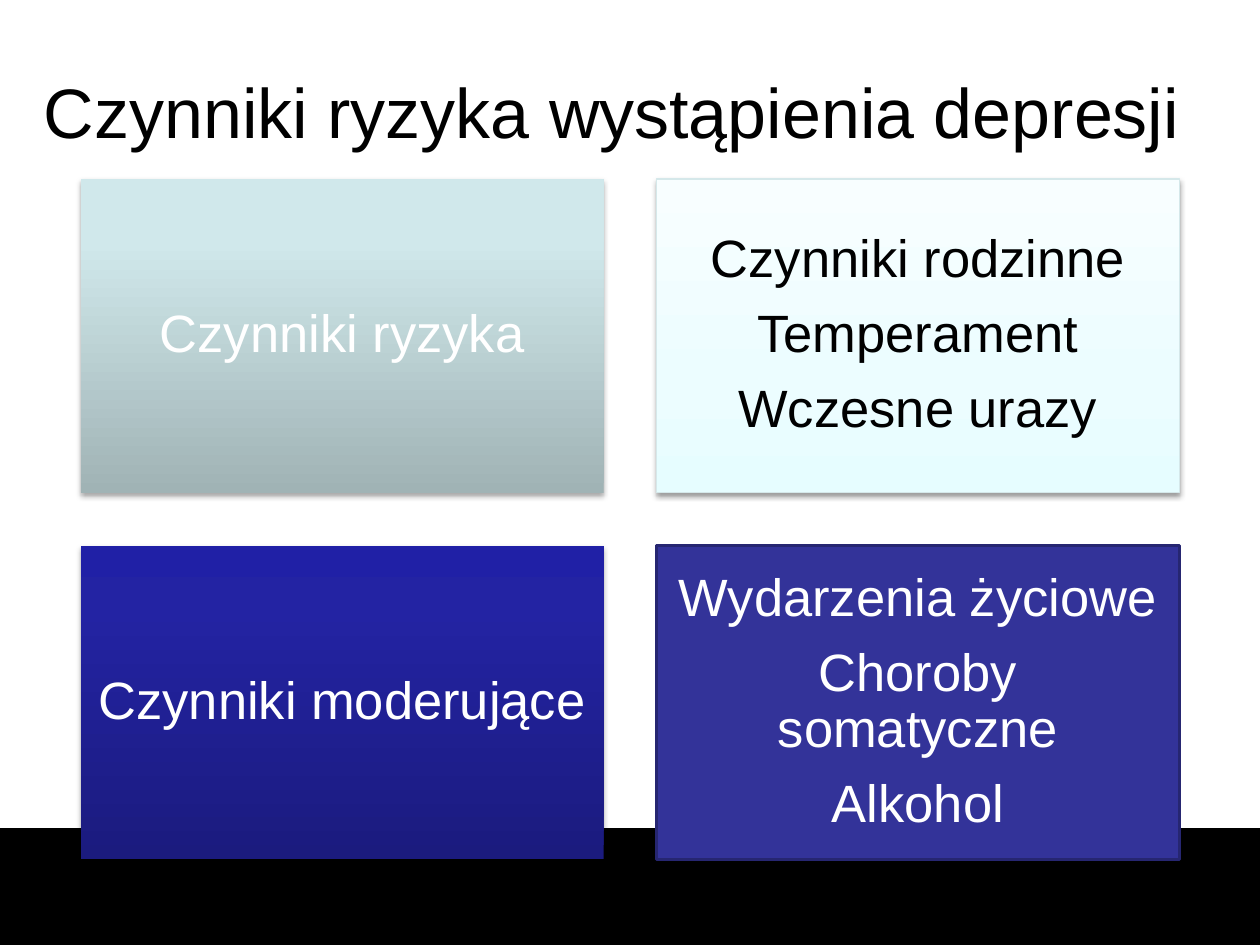
from lxml.etree import SubElement
from pptx import Presentation
from pptx.dml.color import RGBColor
from pptx.enum.shapes import MSO_SHAPE
from pptx.enum.text import MSO_ANCHOR, PP_ALIGN
from pptx.oxml.ns import qn
from pptx.util import Inches, Pt


def paint(color, code):
    color.rgb = RGBColor.from_string(code)


class Board:
    font = "Arial"
    left, top = 0.64, 1.42
    wide, high, gap = 4.15, 2.49, 0.42

    def __init__(self, deck):
        self.slide = deck.slides.add_slide(deck.slide_layouts[6])

    def label(self, par, text, size, ink):
        run = par.add_run()
        run.text = text
        run.font.name = self.font
        run.font.size = Pt(size)
        paint(run.font.color, ink)

    def rect(self, x, y, w, h, fill, line=None, width=0.75):
        box = self.slide.shapes.add_shape(
            MSO_SHAPE.RECTANGLE, Inches(x), Inches(y), Inches(w), Inches(h))
        box.shadow.inherit = False
        if isinstance(fill, str):
            box.fill.solid()
            paint(box.fill.fore_color, fill)
        else:
            self.blend(box, fill)
        if line:
            paint(box.line.color, line)
            box.line.width = Pt(width)
        else:
            box.line.fill.background()
        return box

    def blend(self, box, stops):
        """Upward gradient through (percent, colour) stops."""
        box.fill.gradient()
        box.fill.gradient_angle = 90
        group = box._element.spPr.find(".//" + qn("a:gsLst"))
        for old in list(group):
            group.remove(old)
        for share, code in stops:
            stop = SubElement(group, qn("a:gs"), pos=str(share * 1000))
            SubElement(stop, qn("a:srgbClr"), val=code)

    def shade(self, box, alpha, drop):
        """Soft shadow straight below the box."""
        effect = box._element.spPr.find(qn("a:effectLst"))
        cast = SubElement(effect, qn("a:outerShdw"), blurRad=str(Pt(3.1)),
                          dist=str(Pt(drop)), dir="5400000", rotWithShape="0")
        tint = SubElement(cast, qn("a:srgbClr"), val="000000")
        SubElement(tint, qn("a:alpha"), val=str(alpha * 1000))

    def title(self, text):
        box = self.slide.shapes.add_textbox(
            Inches(0.25), Inches(0.25), Inches(9.42), Inches(1.25))
        frame = box.text_frame
        frame.word_wrap = True
        frame.vertical_anchor = MSO_ANCHOR.MIDDLE
        self.label(frame.paragraphs[0], text, 40, "000000")

    def card(self, col, row, lines, fill, ink="FFFFFF", line=None, width=0.75,
             shadow=None):
        box = self.rect(self.left + col * (self.wide + self.gap),
                        self.top + row * (self.high + self.gap),
                        self.wide, self.high, fill, line, width)
        if shadow:
            self.shade(box, *shadow)
        frame = box.text_frame
        frame.word_wrap = True
        frame.vertical_anchor = MSO_ANCHOR.MIDDLE
        frame.margin_left = frame.margin_right = Inches(0.12)
        frame.margin_top = frame.margin_bottom = Inches(0.12)
        for i, text in enumerate(lines):
            par = frame.add_paragraph() if i else frame.paragraphs[0]
            par.alignment = PP_ALIGN.CENTER
            par.line_spacing = 0.9
            par.space_after = Pt(10.5)
            self.label(par, text, 30, ink)


def main():
    deck = Presentation()
    deck.slide_width, deck.slide_height = Inches(10), Inches(7.5)
    board = Board(deck)

    # Footer band and title
    board.rect(0, 6.58, 10, 0.92, "000000", "000000")
    board.title("Czynniki ryzyka wystąpienia depresji")

    # Risk factors
    board.card(0, 0, ["Czynniki ryzyka"],
               [(0, "A0B3B5"), (80, "D0E8EB"), (100, "D1EAEC")],
               shadow=(35, 1.8))
    board.card(1, 0, ["Czynniki rodzinne", "Temperament", "Wczesne urazy"],
               [(0, "E6FDFF"), (35, "ECFDFF"), (100, "F8FEFF")],
               ink="000000", line="D5E8EA", shadow=(38, 1.6))

    # Moderating factors
    board.card(0, 1, ["Czynniki moderujące"],
               [(0, "1B1B7E"), (80, "2323A3"), (100, "2020A6")],
               shadow=(35, 1.8))
    board.card(1, 1, ["Wydarzenia życiowe", "Choroby somatyczne", "Alkohol"],
               "333399", line="262671", width=2)

    deck.save("out.pptx")


if __name__ == "__main__":
    main()
